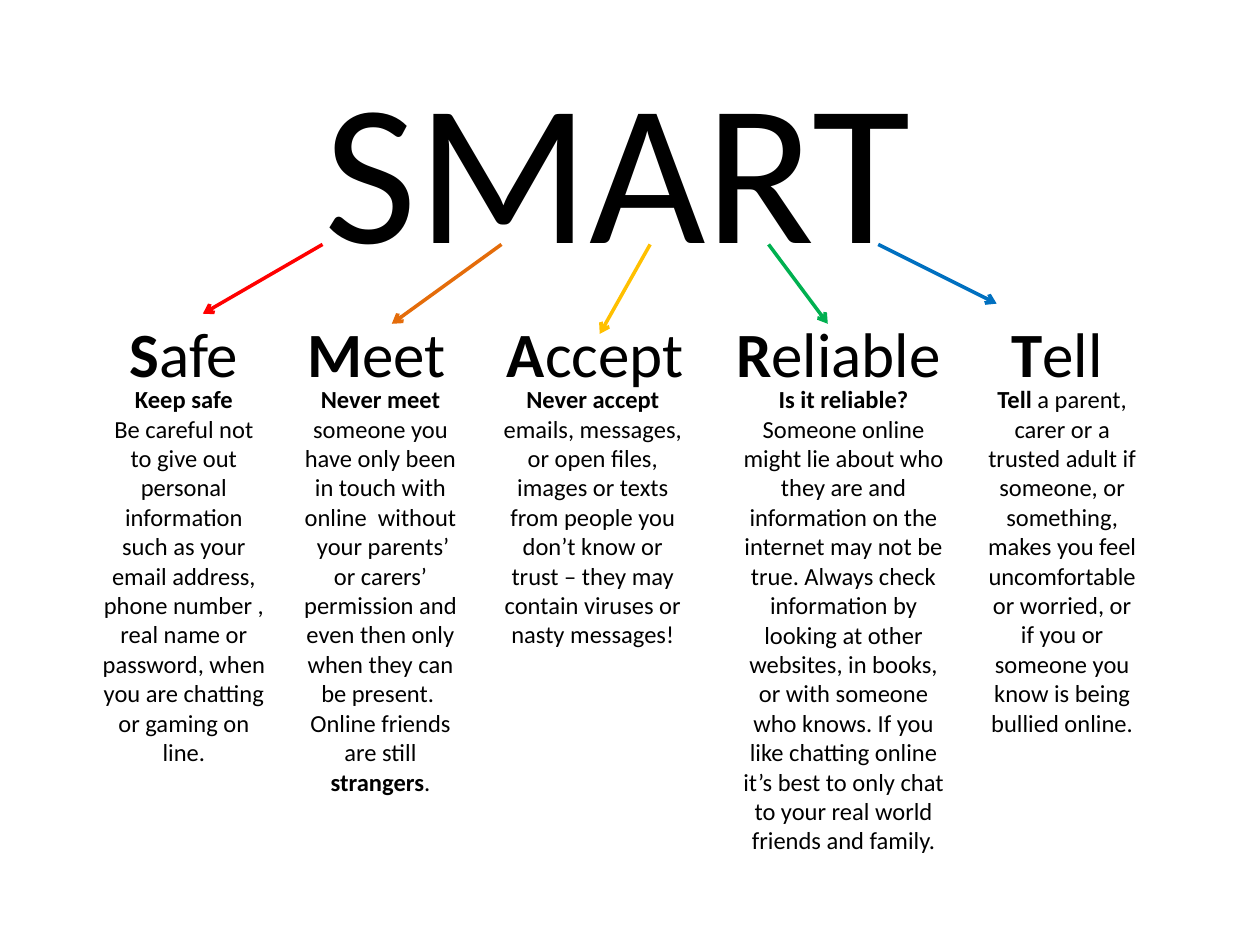
from lxml import etree
from pptx import Presentation
from pptx import util as u
from pptx.dml.color import RGBColor
from pptx.enum import shapes, text
from pptx.oxml.ns import qn

FONT = "Calibri"
BLACK = "000000"
HEADING_TOP, HEADING_HEIGHT = 2.45, 0.71
BODY_TOP = 3

COLUMNS = [
    {
        "word": "Safe", "heading_left": 0.71, "body_left": 0.71, "width": 1.5, "height": 3.4,
        "arrow": (2.56, 1.94, 1.61, 2.49), "color": "FF0000",
        "body": [
            [("Keep safe", True)],
            [("Be careful not to give out personal information such as your email address, "
              "phone number , real name or password, when you are chatting or gaming on line.", False)],
        ],
    },
    {
        "word": "Meet", "heading_left": 2.28, "body_left": 2.31, "width": 1.42, "height": 4.44,
        "arrow": (3.98, 1.94, 3.11, 2.57), "color": "E46C0A",
        "body": [
            [("Never meet ", True),
             ("someone you have only been in touch with online  without  your parents’ or carers’ "
              "permission and even then only when they can be present. ", False)],
            [("Online friends are still ", False), ("strangers", True), (".", False)],
        ],
    },
    {
        "word": "Accept", "heading_left": 3.9, "body_left": 3.88, "width": 1.65, "height": 2.46,
        "arrow": (5.16, 1.94, 4.76, 2.65), "color": "FFC000",
        "body": [
            [("Never accept ", True),
             ("emails, messages, or open ﬁles, images or texts from people you don’t know or "
              "trust – they may contain viruses or nasty messages!", False)],
        ],
    },
    {
        "word": "Reliable", "heading_left": 5.71, "body_left": 5.75, "width": 1.89, "height": 4.11,
        "arrow": (6.1, 1.94, 6.57, 2.57), "color": "00B050",
        "body": [
            [("Is it reliable?", True)],
            [("Someone online might lie about who they are and information on the internet may not "
              "be true. Always check information by looking at other websites, in books, or with "
              "someone who knows. If you like chatting online it’s best to only chat to your real "
              "world friends and family.", False)],
        ],
    },
    {
        "word": "Tell", "heading_left": 7.68, "body_left": 7.72, "width": 1.42, "height": 3.16,
        "arrow": (6.97, 1.94, 7.91, 2.41), "color": "0070C0",
        "body": [
            [("Tell ", True),
             ("a parent, carer or a trusted adult if someone, or something, makes you feel "
              "uncomfortable or worried, or if you or someone you know is being bullied online.", False)],
        ],
    },
]


def rgb(value):
    """Return the colour for a hex string."""
    return RGBColor.from_string(value)


def add_text(slide, box, paragraphs, size, align=text.PP_ALIGN.CENTER, wrap=True):
    """Place paragraphs of (words, bold) runs in a text box."""
    frame = slide.shapes.add_textbox(*map(u.Inches, box)).text_frame
    frame.word_wrap = wrap
    frame.auto_size = text.MSO_AUTO_SIZE.SHAPE_TO_FIT_TEXT
    for index, runs in enumerate(paragraphs):
        paragraph = frame.add_paragraph() if index else frame.paragraphs[0]
        paragraph.alignment = align
        for words, bold in runs:
            run = paragraph.add_run()
            run.text = words
            for name, value in {"name": FONT, "size": u.Pt(size), "bold": bold}.items():
                setattr(run.font, name, value)
            run.font.color.rgb = rgb(BLACK)


def add_arrow(slide, ends, color):
    """Draw a straight coloured arrow between two points."""
    connector = slide.shapes.add_connector(shapes.MSO_CONNECTOR.STRAIGHT, *map(u.Inches, ends))
    connector.line.color.rgb = rgb(color)
    connector.line.width = u.Pt(2)
    etree.SubElement(connector.line._get_or_add_ln(), qn("a:tailEnd"), type="arrow")
    etree.SubElement(connector._element.spPr, qn("a:effectLst"))


def add_title(slide, box):
    """Place the large acronym."""
    add_text(slide, box, [[("SMART", False)]], 115, text.PP_ALIGN.LEFT, wrap=False)


def add_column(slide, column):
    """Place one letter's arrow, heading and advice."""
    word, width = column["word"], column["width"]
    add_arrow(slide, column["arrow"], column["color"])
    heading_box = (column["heading_left"], HEADING_TOP, width, HEADING_HEIGHT)
    add_text(slide, heading_box, [[(word[0], True), (word[1:], False)]], 36)
    body_box = (column["body_left"], BODY_TOP, width, column["height"])
    add_text(slide, body_box, column["body"], 14)


def main():
    """Build and save the slide."""
    presentation = Presentation()
    presentation.slide_width, presentation.slide_height = u.Inches(10), u.Inches(7.5)
    slide = presentation.slides.add_slide(presentation.slide_layouts[6])
    add_title(slide, (2.48, 0.29, 4.9, 2.04))
    for column in COLUMNS:
        add_column(slide, column)
    presentation.save("out.pptx")


if __name__ == "__main__":
    main()
